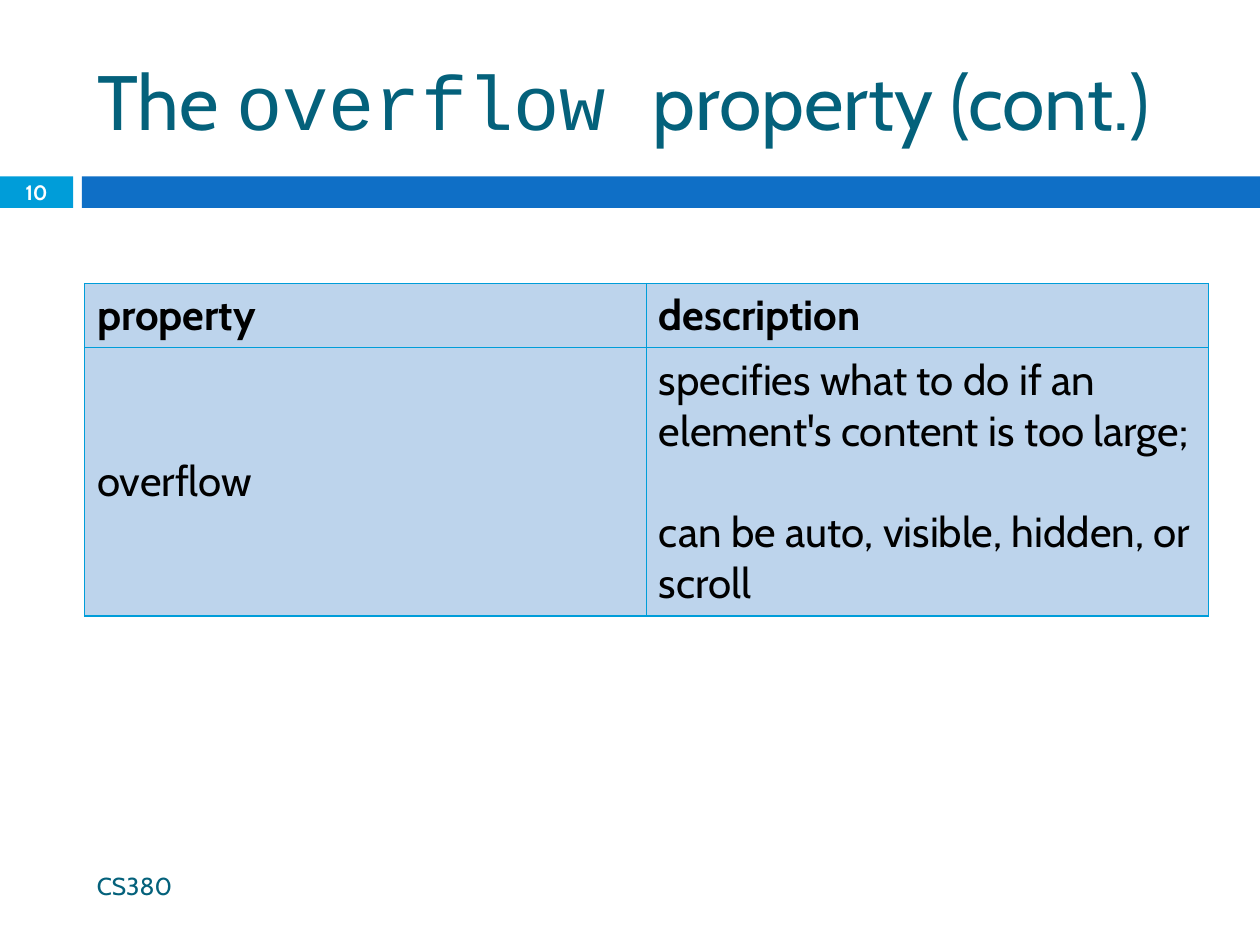
from lxml.etree import SubElement
from pptx import Presentation
from pptx.dml.color import RGBColor
from pptx.enum.shapes import MSO_SHAPE
from pptx.enum.text import MSO_ANCHOR, MSO_AUTO_SIZE, PP_ALIGN
from pptx.oxml.ns import qn
from pptx.util import Inches, Pt

TEAL, CYAN, BLUE = "04617B", "009DD9", "0F6FC6"
PALE, BLACK, WHITE = "BDD4EC", "000000", "FFFFFF"
FACE, MONO = "Cabin", "Courier New"
LEFT, WIDE = 0.67, 8.92


def color(code):
    return RGBColor.from_string(code)


def style(font, size, code, bold=False, face=FACE):
    font.name, font.size, font.bold = face, Pt(size), bold
    font.color.rgb = color(code)


def add_title(slide, parts):
    title = slide.shapes.title
    title.left, title.top = Inches(LEFT), Inches(0.25)
    title.width, title.height = Inches(WIDE), Inches(1.08)
    frame = title.text_frame
    frame.auto_size = MSO_AUTO_SIZE.NONE
    frame.vertical_anchor = MSO_ANCHOR.MIDDLE
    para = frame.paragraphs[0]
    para.alignment = PP_ALIGN.LEFT
    for text, face in parts:
        run = para.add_run()
        run.text = text
        style(run.font, 44, TEAL, face=face)


def add_bar(slide, left, width, code):
    bar = slide.shapes.add_shape(MSO_SHAPE.RECTANGLE, Inches(left), Inches(1.4),
                                 Inches(width), Inches(0.25))
    bar.shadow.inherit = False
    bar.fill.solid()
    bar.fill.fore_color.rgb = color(code)
    bar.line.fill.background()


def add_label(slide, box, text, size, code, bold=False, align=PP_ALIGN.LEFT):
    frame = slide.shapes.add_textbox(*map(Inches, box)).text_frame
    frame.word_wrap = True
    frame.vertical_anchor = MSO_ANCHOR.MIDDLE
    para = frame.paragraphs[0]
    para.text, para.alignment = text, align
    style(para.font, size, code, bold)


def add_border(cell, code, width):
    props = cell._tc.get_or_add_tcPr()
    for side in ("a:lnL", "a:lnR", "a:lnT", "a:lnB"):
        line = SubElement(props, qn(side), w=str(Pt(width)))
        SubElement(SubElement(line, qn("a:solidFill")), qn("a:srgbClr"), val=code)


def fill_cell(cell, text, bold):
    add_border(cell, CYAN, 0.79)
    cell.fill.solid()
    cell.fill.fore_color.rgb = color(PALE)
    cell.vertical_anchor = MSO_ANCHOR.MIDDLE
    cell.text = text
    for i, para in enumerate(cell.text_frame.paragraphs):
        style(para.font, 24, BLACK, bold)
        if i:
            para.space_before = Pt(29)  # one line of air


def add_grid(slide, rows, heights):
    table = slide.shapes.add_table(len(rows), len(rows[0]), Inches(LEFT), Inches(2.25),
                                   Inches(WIDE), Inches(sum(heights))).table
    for r, row in enumerate(rows):
        table.rows[r].height = Inches(heights[r])
        for c, text in enumerate(row):
            fill_cell(table.cell(r, c), text, bold=r == 0)


def main():
    deck = Presentation()
    deck.slide_width, deck.slide_height = Inches(10), Inches(7.5)
    slide = deck.slides.add_slide(deck.slide_layouts[5])

    # Heading and the band below it
    add_bar(slide, 0, 0.58, CYAN)
    add_bar(slide, 0.65, 9.35, BLUE)
    add_title(slide, [("The ", FACE), ("overflow ", MONO), ("property (cont.)", FACE)])
    add_label(slide, (0, 1.39, 0.58, 0.27), "10", 11.9, WHITE, True, PP_ALIGN.CENTER)

    # Property table
    add_grid(slide, [
        ("property", "description"),
        ("overflow", "specifies what to do if an element's content is too large;\n"
                     "can be auto, visible, hidden, or scroll"),
    ], (0.51, 2.13))

    # Footer
    add_label(slide, (LEFT, 6.83, 5.93, 0.4), "CS380", 14, TEAL)
    deck.save("out.pptx")


if __name__ == "__main__":
    main()
